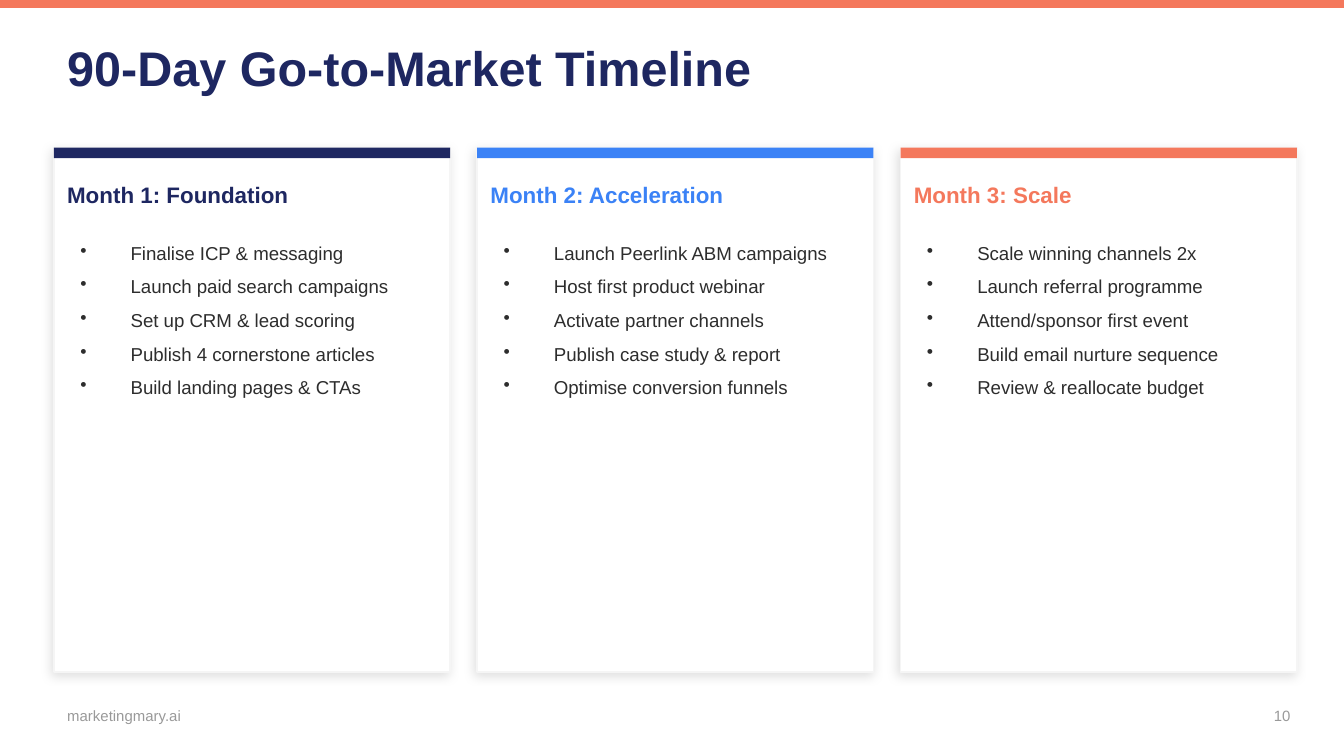
from lxml.etree import SubElement
from pptx import Presentation
from pptx.dml.color import RGBColor
from pptx.enum.shapes import MSO_SHAPE as Preset
from pptx.enum.text import MSO_ANCHOR as Anchor, MSO_AUTO_SIZE as AutoSize, PP_ALIGN as Align
from pptx.oxml.ns import qn
from pptx.util import Cm, Pt

NAVY = RGBColor(0x1E, 0x27, 0x61)
BLUE = RGBColor(0x3B, 0x82, 0xF6)
CORAL = RGBColor(0xF4, 0x78, 0x5C)
WHITE = RGBColor(0xFF, 0xFF, 0xFF)
EDGE = RGBColor(0xF5, 0xF5, 0xF5)
INK = RGBColor(0x2D, 0x2D, 0x2D)
GREY = RGBColor(0x99, 0x99, 0x99)
FONT = "Arial"

TITLE = "90-Day Go-to-Market Timeline"
MONTHS = [
    ("Month 1: Foundation", NAVY, [
        "Finalise ICP & messaging",
        "Launch paid search campaigns",
        "Set up CRM & lead scoring",
        "Publish 4 cornerstone articles",
        "Build landing pages & CTAs",
    ]),
    ("Month 2: Acceleration", BLUE, [
        "Launch Peerlink ABM campaigns",
        "Host first product webinar",
        "Activate partner channels",
        "Publish case study & report",
        "Optimise conversion funnels",
    ]),
    ("Month 3: Scale", CORAL, [
        "Scale winning channels 2x",
        "Launch referral programme",
        "Attend/sponsor first event",
        "Build email nurture sequence",
        "Review & reallocate budget",
    ]),
]
SITE = "marketingmary.ai"
PAGE_NUMBER = "10"

# Lengths in centimetres
PAGE_WIDTH, PAGE_HEIGHT = 25.4, 14.29
MARGIN = 1.02
CARD_TOP, CARD_WIDTH, CARD_HEIGHT = 2.79, 7.49, 9.91
CARD_PITCH = 8.0
PADDING = 0.25
BULLET_INDENT = 0.95
FOOTER_TOP, FOOTER_HEIGHT = 13.08, 0.89


def add_rectangle(page, left, top, width, height, fill):
    box = page.shapes.add_shape(Preset.RECTANGLE, Cm(left), Cm(top), Cm(width), Cm(height))
    box.shadow.inherit = False
    box.fill.solid()
    box.fill.fore_color.rgb = fill
    box.line.fill.background()
    return box


def add_soft_shadow(box):
    effects = box._element.spPr.find(qn("a:effectLst"))
    shadow = SubElement(effects, qn("a:outerShdw"), blurRad=str(Pt(6)), dist=str(Pt(2)),
                        dir=str(135 * 60000), algn="bl", rotWithShape="0")
    color = SubElement(shadow, qn("a:srgbClr"), val="000000")
    SubElement(color, qn("a:alpha"), val="12000")


def add_span(para, text, size, color, bold=False):
    span = para.add_run()
    span.text = text
    span.font.name = FONT
    span.font.size = Pt(size)
    span.font.bold = bold
    span.font.color.rgb = color


def set_frame(box, anchor, inset=True):
    """Wrap the text, anchor it and optionally drop the insets."""
    frame = box.text_frame
    frame.word_wrap = True
    frame.auto_size = AutoSize.NONE
    frame.vertical_anchor = anchor
    if not inset:
        frame.margin_left = frame.margin_top = frame.margin_right = frame.margin_bottom = 0
    return frame


def add_frame(page, left, top, width, height, anchor=Anchor.MIDDLE, inset=True):
    box = page.shapes.add_textbox(Cm(left), Cm(top), Cm(width), Cm(height))
    return set_frame(box, anchor, inset)


def make_bullet(para):
    properties = para._p.get_or_add_pPr()
    properties.set("marL", str(Cm(BULLET_INDENT)))
    properties.set("indent", str(-Cm(BULLET_INDENT)))
    SubElement(properties, qn("a:buChar"), char="•")
    para.space_after = Pt(6)


def add_title(page):
    title = page.shapes.title
    title.left, title.top, title.width, title.height = Cm(1.27), Cm(0.51), Cm(22.86), Cm(1.52)
    para = set_frame(title, Anchor.MIDDLE, inset=False).paragraphs[0]
    para.alignment = Align.LEFT
    add_span(para, TITLE, 26, NAVY, bold=True)


def add_month(page, left, heading, color, tasks):
    card = add_rectangle(page, left, CARD_TOP, CARD_WIDTH, CARD_HEIGHT, WHITE)
    card.line.color.rgb = EDGE
    card.line.width = Pt(1)
    add_soft_shadow(card)
    add_rectangle(page, left, CARD_TOP, CARD_WIDTH, 0.2, color)

    text_left, text_width = left + PADDING, CARD_WIDTH - 2 * PADDING
    frame = add_frame(page, text_left, CARD_TOP + 0.38, text_width, 1.02, inset=False)
    add_span(frame.paragraphs[0], heading, 12, color, bold=True)

    frame = add_frame(page, text_left, CARD_TOP + 1.65, text_width, 7.62, Anchor.TOP)
    for index, task in enumerate(tasks):
        para = frame.add_paragraph() if index else frame.paragraphs[0]
        make_bullet(para)
        add_span(para, task, 10, INK)


def add_footer(page, left, width, text, alignment):
    para = add_frame(page, left, FOOTER_TOP, width, FOOTER_HEIGHT).paragraphs[0]
    para.alignment = alignment
    add_span(para, text, 8, GREY)


def main():
    deck = Presentation()
    deck.slide_width, deck.slide_height = Cm(PAGE_WIDTH), Cm(PAGE_HEIGHT)
    page = deck.slides.add_slide(deck.slide_layouts[5])

    add_rectangle(page, 0, 0, PAGE_WIDTH, 0.15, CORAL)
    add_title(page)
    for index, month in enumerate(MONTHS):
        add_month(page, MARGIN + index * CARD_PITCH, *month)
    add_footer(page, MARGIN, 5.08, SITE, Align.LEFT)
    add_footer(page, 23.37, 1.27, PAGE_NUMBER, Align.RIGHT)

    deck.save("out.pptx")


if __name__ == "__main__":
    main()
